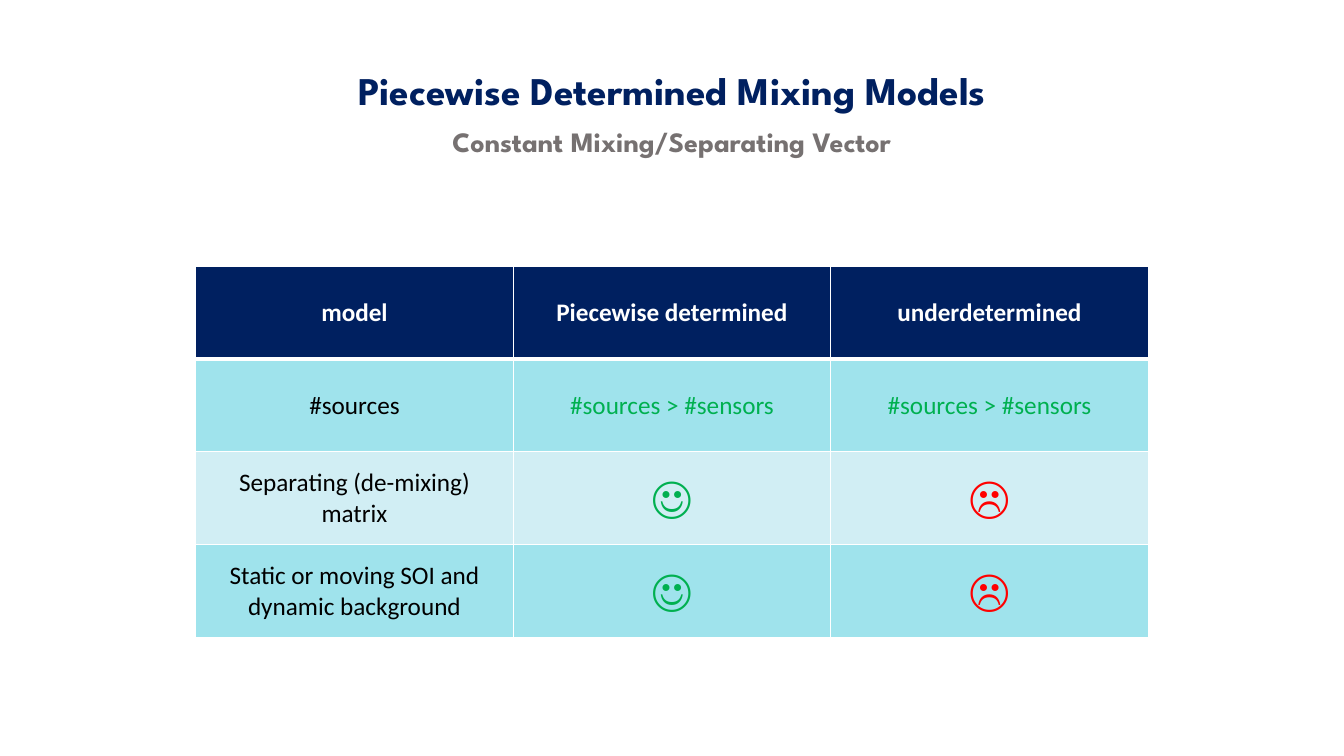
from dataclasses import dataclass

from lxml import etree
from pptx import Presentation
from pptx.dml.color import RGBColor
from pptx.enum.text import MSO_ANCHOR, MSO_AUTO_SIZE, PP_ALIGN
from pptx.oxml.ns import qn
from pptx.util import Pt

CENTER = PP_ALIGN.CENTER
TOP = MSO_ANCHOR.TOP
MIDDLE = MSO_ANCHOR.MIDDLE
NO_FIT = MSO_AUTO_SIZE.NONE

NAVY = RGBColor(0x00, 0x20, 0x60)
GRAY = RGBColor(0x76, 0x71, 0x71)
WHITE = RGBColor(0xFF, 0xFF, 0xFF)
BLACK = RGBColor(0x00, 0x00, 0x00)
GREEN = RGBColor(0x00, 0xB0, 0x50)
RED = RGBColor(0xFF, 0x00, 0x00)
AQUA = RGBColor(0x9F, 0xE3, 0xEC)
PALE_AQUA = RGBColor(0xD1, 0xEE, 0xF4)

COL_WIDTH = 226.8
ROW_HEIGHT = 66.4


@dataclass(frozen=True)
class Line:
    text: str
    size: float
    color: RGBColor
    font: str = "Calibri"
    bold: bool = False


@dataclass(frozen=True)
class Row:
    fill: RGBColor
    cells: tuple[tuple[Line, ...], ...]
    top: float = 1
    bottom: float = 1


def label(*texts: str, color: RGBColor = BLACK, bold: bool = False) -> tuple[Line, ...]:
    return tuple(Line(text, 18, color, bold=bold) for text in texts)


SMILE = (Line("☺", 32, GREEN),)
FROWN = (Line("☹", 32, RED),)
MORE_SOURCES = label("#sources > #sensors", color=GREEN)

HEADING = (
    Line("Piecewise Determined Mixing Models", 28, NAVY, "League Spartan", True),
    Line("Constant Mixing/Separating Vector", 20, GRAY, "League Spartan", True),
)
ROWS = (
    Row(NAVY, tuple(label(text, color=WHITE, bold=True)
                    for text in ("model", "Piecewise determined", "underdetermined")), bottom=3),
    Row(AQUA, (label("#sources"), MORE_SOURCES, MORE_SOURCES), top=3),
    Row(PALE_AQUA, (label("Separating (de-mixing)", "matrix"), SMILE, FROWN)),
    Row(AQUA, (label("Static or moving SOI and dynamic background"), SMILE, FROWN)),
)


def write_lines(tf, lines: tuple[Line, ...]) -> None:
    for i, line in enumerate(lines):
        p = tf.paragraphs[0] if i == 0 else tf.add_paragraph()
        p.alignment = CENTER
        r = p.add_run()
        r.text = line.text
        r.font.name = line.font
        r.font.size = Pt(line.size)
        r.font.bold = line.bold
        r.font.color.rgb = line.color


def add_border(cell, side: str, width: float) -> None:
    ln = etree.SubElement(cell._tc.get_or_add_tcPr(), qn(f"a:ln{side}"), w=str(Pt(width)))
    fill = etree.SubElement(ln, qn("a:solidFill"))
    etree.SubElement(fill, qn("a:srgbClr"), val=str(WHITE))


def add_heading(s) -> None:
    title = s.shapes.title.element
    title.getparent().remove(title)
    sp = s.placeholders[1]
    sp.left, sp.top, sp.width, sp.height = Pt(151.2), Pt(47.5), Pt(657.4), Pt(91.4)
    tf = sp.text_frame
    tf.word_wrap = True
    tf.auto_size = NO_FIT
    tf.vertical_anchor = TOP
    write_lines(tf, HEADING)
    for p in tf.paragraphs:
        p.line_spacing = 0.9
        p.space_before = Pt(10)


def add_comparison(s) -> None:
    cols = len(ROWS[0].cells)
    table = s.shapes.add_table(len(ROWS), cols, Pt(139.8), Pt(190),
                               Pt(COL_WIDTH * cols), Pt(ROW_HEIGHT * len(ROWS))).table
    for column in table.columns:
        column.width = Pt(COL_WIDTH)
    for i, row in enumerate(ROWS):
        table.rows[i].height = Pt(ROW_HEIGHT)
        for j, lines in enumerate(row.cells):
            cell = table.cell(i, j)
            cell.vertical_anchor = MIDDLE
            for side, width in (("L", 1), ("R", 1), ("T", row.top), ("B", row.bottom)):
                add_border(cell, side, width)
            cell.fill.solid()
            cell.fill.fore_color.rgb = row.fill
            write_lines(cell.text_frame, lines)


def main() -> None:
    prs = Presentation()
    prs.slide_width, prs.slide_height = Pt(960), Pt(540)
    s = prs.slides.add_slide(prs.slide_layouts[2])
    add_heading(s)
    add_comparison(s)
    prs.save("out.pptx")


if __name__ == "__main__":
    main()
